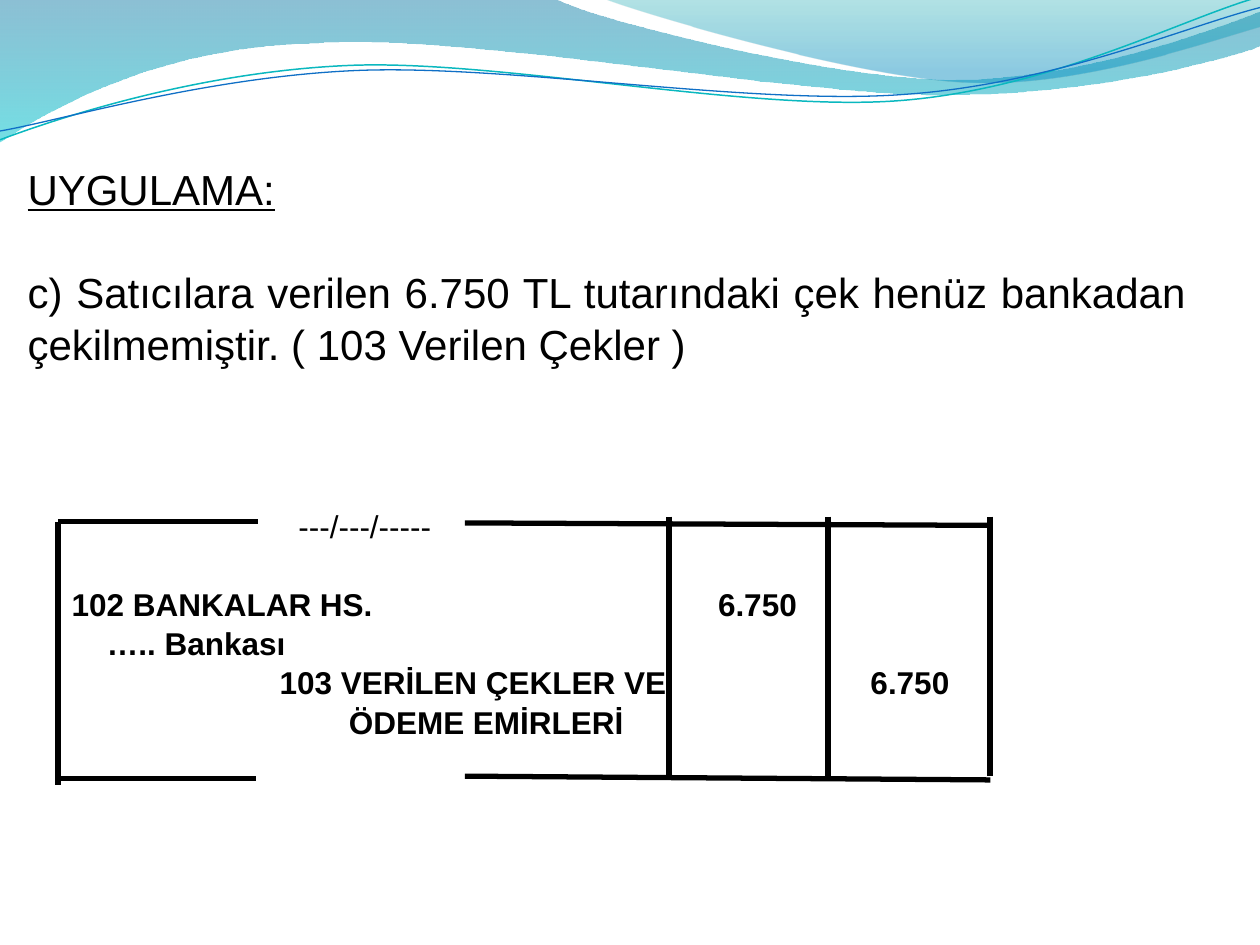
from lxml.etree import Element, SubElement
from pptx import Presentation
from pptx.dml.color import RGBColor
from pptx.enum.shapes import MSO_CONNECTOR as Connector
from pptx.enum.text import PP_ALIGN as Align
from pptx.oxml.ns import qn
from pptx.util import Inches, Pt

BLACK = RGBColor(0x00, 0x00, 0x00)
DEEP_BLUE = RGBColor(0x00, 0x74, 0xA1)
AQUA = RGBColor(0x00, 0xC6, 0xCF)
TEAL = RGBColor(0x00, 0xA1, 0xA9)
SKY = RGBColor(0x00, 0x8B, 0xBF)
LINE_TEAL = RGBColor(0x0A, 0xB8, 0xBF)
LINE_BLUE = RGBColor(0x0F, 0x6F, 0xC6)

presentation = Presentation()
presentation.slide_width = Inches(10)
presentation.slide_height = Inches(7.5)
slide = presentation.slides.add_slide(presentation.slide_layouts[6])
CELL = presentation.slide_width // 100  # the slide is a grid of 100 x 75 cells


def add_wave(segments, points, close):
    """Draw a path of L (line) and C (cubic curve) segments through the points."""
    corners = [(x * CELL, y * CELL) for x, y in points]
    builder = slide.shapes.build_freeform(*corners[0])
    builder.add_line_segments(corners[1:], close=close)
    shape = builder.convert_to_shape()
    shape.shadow.inherit = False
    steps = iter(list(shape._element.iter(qn("a:lnTo"))))
    for segment in segments:
        step = next(steps)
        if segment == "C":
            curve = Element(qn("a:cubicBezTo"))
            step.addprevious(curve)
            for control in (step, next(steps), next(steps)):
                curve.append(control[0])
                control.getparent().remove(control)
    return shape


# Header bands: segments, points, gradient stops (position, colour, opacity %)
bands = [
    ("LCCLCCCL",
     [(0, 0), (44, -0.1), (47.6, 1.7), (66.4, 6.3), (75.8, 6.3),
      (85.3, 6.3), (95.8, 2.6), (100, 0.9), (100.1, 3.6),
      (98.3, 4.4), (87, 7.6), (74.6, 7.5), (62.2, 7.5), (38.2, 2.8), (25.7, 3.4),
      (12.9, 3.6), (4.6, 8.3), (-0.1, 11.3), (0, 0)],
     [(0, DEEP_BLUE, 45), (1, AQUA, 55)]),
    ("CCLL",
     [(47.9, -0.1), (50.9, 1.1), (68.2, 6.2), (76.9, 6.5),
      (85.6, 6.9), (96.1, 3.2), (100, 2.1), (100, 0), (47.9, -0.1)],
     [(0, TEAL, 30), (0.8, SKY, 45)]),
]
for segments, points, stops in bands:
    band = add_wave(segments, points, True)
    band.line.fill.background()
    band.fill.gradient()
    band.fill.gradient_angle = 270
    for gradient_stop, (position, color, opacity) in zip(band.fill.gradient_stops, stops):
        gradient_stop.position = position
        gradient_stop.color.rgb = color
    colors = band._element.spPr.iter(qn("a:srgbClr"))
    for color_element, (position, color, opacity) in zip(list(colors), stops):
        SubElement(color_element, qn("a:alpha"), val=str(opacity * 1000))

# Thin wave lines under the bands
waves = [
    ([(0, 11.1), (4.8, 9.3), (15.8, 5.7), (27.7, 5.2), (39.5, 4.7), (59.3, 8.9),
      (71.3, 8), (83.3, 7.1), (93.8, 1.5), (99.8, -0.2)], LINE_TEAL, 0.85),
    ([(0, 10.4), (4.7, 9.6), (16.4, 6.1), (28.3, 5.6), (40.3, 5.1), (59.7, 8.4),
      (71.7, 7.5), (83.6, 6.7), (94.1, 2.1), (100, 0.6)], LINE_BLUE, 0.75),
]
for points, color, weight in waves:
    wave = add_wave("CCC", points, False)
    wave.fill.background()
    wave.line.color.rgb = color
    wave.line.width = Pt(weight)

# Exercise and journal entry: text, size, bold, space before, tab stops in cells
text_lines = [
    ("UYGULAMA:", 24, False, 0, []),
    ("c) Satıcılara verilen 6.750 TL tutarındaki çek henüz bankadan çekilmemiştir. "
     "( 103 Verilen Çekler )", 24, False, 29, []),
    ("\t---/---/-----", 18, False, 78, [21.5]),
    ("\t102 BANKALAR HS.\t6.750", 18, True, 22, [3.5, 54.8]),
    ("\t….. Bankası", 18, True, 0, [6.3]),
    ("\t103 VERİLEN ÇEKLER VE\t6.750", 18, True, 0, [20, 66.9]),
    ("\tÖDEME EMİRLERİ", 18, True, 0, [25.5]),
]
text_box = slide.shapes.add_textbox(1.2 * CELL, 12.3 * CELL, 93.9 * CELL, 62 * CELL)
text_frame = text_box.text_frame
text_frame.word_wrap = True
text_frame.text = "\n".join(line[0] for line in text_lines)
for paragraph, (text, size, bold, gap, tabs) in zip(text_frame.paragraphs, text_lines):
    paragraph.alignment = Align.LEFT if tabs else Align.JUSTIFY
    paragraph.line_spacing = 1.04
    paragraph.space_before = Pt(gap)
    if tabs:
        tab_list = SubElement(paragraph._p.get_or_add_pPr(), qn("a:tabLst"))
        for tab in tabs:
            SubElement(tab_list, qn("a:tab"), pos=str(round(tab * CELL)), algn="l")
    for run in paragraph.runs:
        run.font.name = "Arial"
        run.font.size = Pt(size)
        run.font.bold = bold
        run.font.color.rgb = BLACK
text_frame.paragraphs[0].runs[0].font.underline = True

# Journal frame: start x, start y, end x, end y, weight
LEFT, RIGHT, TOP, BOTTOM = 4.6, 78.6, 41.4, 61.8
rules = [
    (LEFT, TOP, 20.5, TOP, 3),
    (36.9, 41.5, RIGHT, 41.7, 3),
    (LEFT, BOTTOM, 20.3, BOTTOM, 3),
    (36.9, 61.6, RIGHT, 61.9, 3),
    (LEFT, TOP, LEFT, 62.3, 3.5),
]
rules += [(x, 41, x, 61.6, 3.5) for x in (53.1, 65.7, RIGHT)]
for *ends, weight in rules:
    rule = slide.shapes.add_connector(Connector.STRAIGHT, *(round(end * CELL) for end in ends))
    rule.line.color.rgb = BLACK
    rule.line.width = Pt(weight)
    SubElement(rule._element.spPr, qn("a:effectLst"))

presentation.save("out.pptx")
